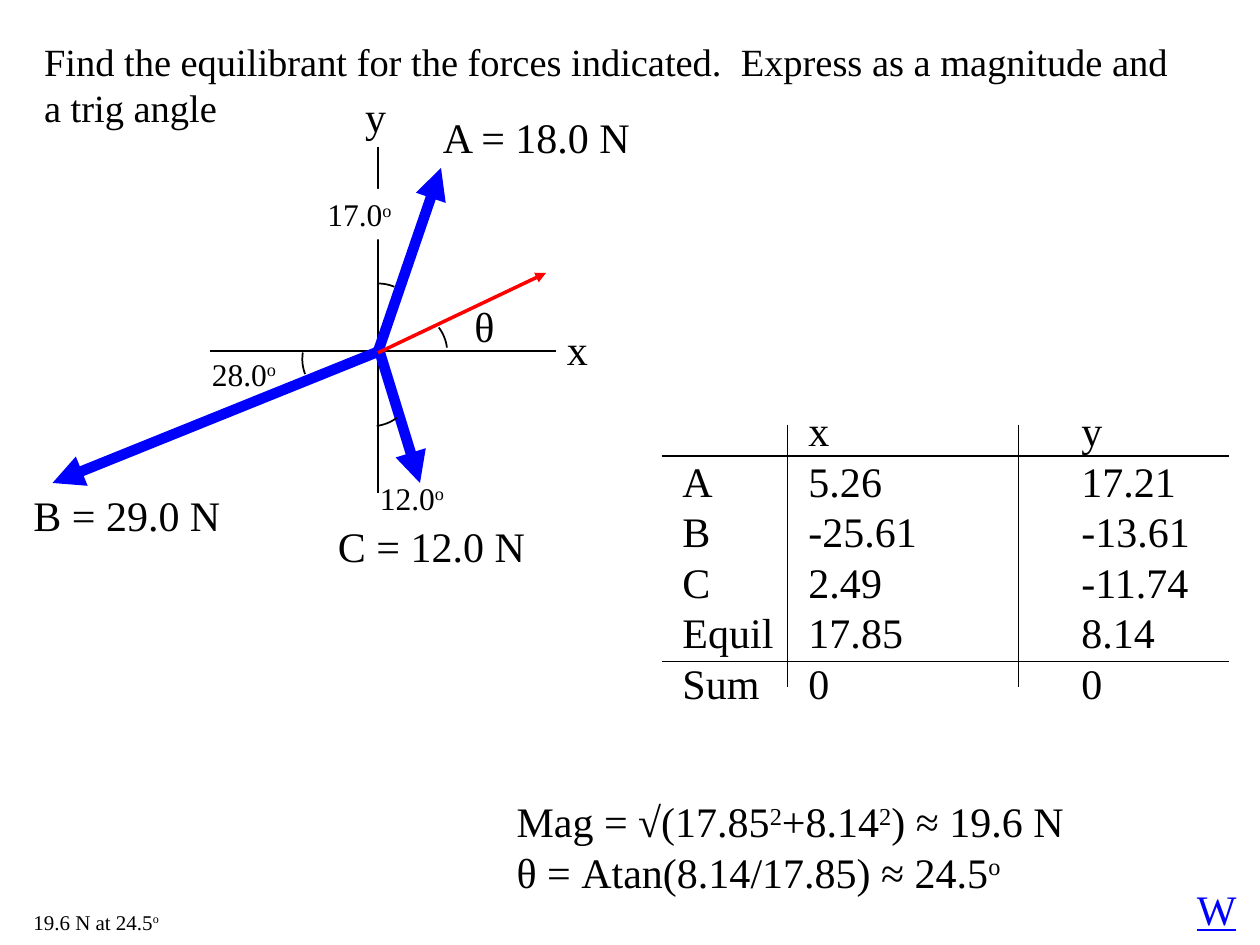
"""Build a slide that finds the equilibrant of three forces."""
from math import cos, radians, sin

from lxml.etree import SubElement
from pptx import Presentation
from pptx.dml.color import RGBColor
from pptx.enum.shapes import MSO_CONNECTOR
from pptx.enum.text import MSO_ANCHOR, MSO_AUTO_SIZE, PP_ALIGN
from pptx.oxml.ns import qn
from pptx.util import Inches, Pt

THEME = {
    "font": "Times New Roman",
    "ink": RGBColor(0, 0, 0),
    "paper": RGBColor(255, 255, 255),
    "force": RGBColor(0, 0, 255),
    "resultant": RGBColor(255, 0, 0),
    "title": Pt(22), "main": Pt(24), "angle": Pt(18), "small": Pt(12),
    "thin": Pt(1), "medium": Pt(2), "thick": Pt(6),
}
COLUMNS, ROWS = 120, 90
CELL = Inches(10) / COLUMNS

QUESTION = "Find the equilibrant for the forces indicated.  Express as a magnitude and a trig angle"
QUESTION_BOX = (3, 3, 111, 10)
SOLUTION = ["Mag = √(17.85^2^+8.14^2^) ≈ 19.6 N", "θ = Atan(8.14/17.85) ≈ 24.5^o"]
SOLUTION_BOX = (48, 75.2, 60, 10.8)

AXES = [((36, 14), (36, 47)), ((53, 33.45), (20, 33.45))]
ARROWS = [
    ((36, 33.5), (42, 16), "force", "thick"),
    ((36, 33.5), (5, 46), "force", "thick"),
    ((36, 33), (40, 46), "force", "thick"),
    ((36, 33.6), (52, 26), "resultant", "medium"),
]
ARC_RADIUS = 4
ANGLE_ARCS = [
    ((36, 31), 67, 90),
    ((32.8, 34.2), 171, 201),
    ((35.4, 36.6), 277, 307),
    ((38.6, 33.6), 7, 37),
]
LABELS = [
    ("A = 18.0 N", (41, 10, 20.4, 6), "main"),
    ("B = 29.0 N", (2, 46, 20.3, 6), "main"),
    ("C = 12.0 N", (31, 49, 20.3, 6), "main"),
    ("17.0^o", (30, 18, 8.6, 4.8), "angle"),
    ("28.0^o", (19, 33.2, 8.6, 4.8), "angle"),
    ("12.0^o", (35, 45, 8.6, 4.8), "angle"),
    ("y", (33.6, 8, 4.4, 6), "main"),
    ("x", (52.8, 30.2, 4.4, 6), "main"),
    ("θ", (44, 28, 4.4, 6), "main"),
    ("19.6 N at 24.5^o", (2, 86, 14.5, 3.6), "small"),
]
MASKING_LABEL = "17.0^o"
LINK_LABEL, LINK_BOX = "W", (112.8, 83.55, 6.2, 6)

COMPONENTS = [
    ("", "x", "y"),
    ("A", "5.26", "17.21"),
    ("B", "-25.61", "-13.61"),
    ("C", "2.49", "-11.74"),
    ("Equil", "17.85", "8.14"),
    ("Sum", "0", "0"),
]
TABLE_CORNER, ROW_HEIGHT = (63, 38.8), 4.8
COLUMN_WIDTHS, COLUMN_INDENTS = (12, 22, 20), (2, 2, 6)
TABLE_RULES = [((63, y), (117, y)) for y in (43.45, 63)]
TABLE_RULES += [((x, 40.45), (x, 65.4)) for x in (75, 97)]


def grid(*lengths):
    return [round(length * CELL) for length in lengths]


def apply(target, **values):
    for attribute, value in values.items():
        setattr(target, attribute, value)


def write(paragraph, text, size, color="ink", underline=False):
    """Add runs to a paragraph; text between carets is superscript."""
    apply(paragraph, alignment=PP_ALIGN.LEFT, space_before=Pt(0))
    for index, part in enumerate(text.split("^")):
        if not part:
            continue
        run = paragraph.add_run()
        run.text = part
        apply(run.font, name=THEME["font"], size=THEME[size], bold=False, underline=underline)
        run.font.color.rgb = THEME[color]
        if index % 2:
            run.font._element.set("baseline", "30000")


def fill_placeholder(placeholder, box, lines, size):
    apply(placeholder, **dict(zip(("left", "top", "width", "height"), grid(*box))))
    frame = placeholder.text_frame
    apply(frame, word_wrap=True, auto_size=MSO_AUTO_SIZE.NONE, vertical_anchor=MSO_ANCHOR.TOP)
    for index, line in enumerate(lines):
        paragraph = frame.add_paragraph() if index else frame.paragraphs[0]
        write(paragraph, line, size)
        properties = paragraph._p.get_or_add_pPr()
        properties.set("marL", "0")
        properties.set("indent", "0")
        SubElement(properties, qn("a:buNone"))


def add_label(slide, text, box, size, **style):
    label = slide.shapes.add_textbox(*grid(*box))
    label.text_frame.word_wrap = False
    write(label.text_frame.paragraphs[0], text, size, **style)
    return label


def add_line(slide, start, end, color="ink", weight="thin", arrow=False):
    connector = slide.shapes.add_connector(MSO_CONNECTOR.STRAIGHT, *grid(*start, *end))
    connector.line.color.rgb = THEME[color]
    connector.line.width = THEME[weight]
    if arrow:
        SubElement(connector.line._get_or_add_ln(), qn("a:tailEnd"), type="triangle")
    SubElement(connector._element.spPr, qn("a:effectLst"))


def add_angle_arc(slide, center, start, end, steps=8):
    x, y = center
    turns = [radians(start + (end - start) * step / steps) for step in range(steps + 1)]
    points = [grid(x + ARC_RADIUS * cos(turn), y - ARC_RADIUS * sin(turn)) for turn in turns]
    builder = slide.shapes.build_freeform(*points[0])
    builder.add_line_segments(points[1:], close=False)
    arc = builder.convert_to_shape()
    arc.shadow.inherit = False
    arc.fill.background()
    arc.line.color.rgb = THEME["ink"]
    arc.line.width = THEME["thin"]


def hide_borders(cell):
    properties = cell._tc.get_or_add_tcPr()
    for edge in ("lnL", "lnR", "lnT", "lnB"):
        SubElement(SubElement(properties, qn(f"a:{edge}")), qn("a:noFill"))


def add_components(slide):
    size = (sum(COLUMN_WIDTHS), ROW_HEIGHT * len(COMPONENTS))
    table = slide.shapes.add_table(
        len(COMPONENTS), len(COLUMN_WIDTHS), *grid(*TABLE_CORNER, *size)).table
    apply(table, first_row=False, horz_banding=False)
    for column, width in zip(table.columns, grid(*COLUMN_WIDTHS)):
        column.width = width
    for r, values in enumerate(COMPONENTS):
        table.rows[r].height = grid(ROW_HEIGHT)[0]
        for c, value in enumerate(values):
            cell = table.cell(r, c)
            apply(cell, margin_left=grid(COLUMN_INDENTS[c])[0], margin_right=0,
                  margin_top=0, margin_bottom=0, vertical_anchor=MSO_ANCHOR.MIDDLE)
            hide_borders(cell)
            cell.fill.background()
            write(cell.text_frame.paragraphs[0], value, "main")
    for start, end in TABLE_RULES:
        add_line(slide, start, end)


def main():
    deck = Presentation()
    apply(deck, slide_width=grid(COLUMNS)[0], slide_height=grid(ROWS)[0])
    slide = deck.slides.add_slide(deck.slide_layouts[1])
    fill_placeholder(slide.shapes.title, QUESTION_BOX, [QUESTION], "title")
    fill_placeholder(slide.placeholders[1], SOLUTION_BOX, SOLUTION, "main")
    for start, end in AXES:
        add_line(slide, start, end)
    for start, tip, color, weight in ARROWS:
        add_line(slide, start, tip, color, weight, arrow=True)
    for arc in ANGLE_ARCS:
        add_angle_arc(slide, *arc)
    for text, box, size in LABELS:
        label = add_label(slide, text, box, size)
        if text == MASKING_LABEL:
            label.fill.solid()
            label.fill.fore_color.rgb = THEME["paper"]
    add_label(slide, LINK_LABEL, LINK_BOX, "main", color="force", underline=True)
    add_components(slide)
    deck.save("out.pptx")


if __name__ == "__main__":
    main()
